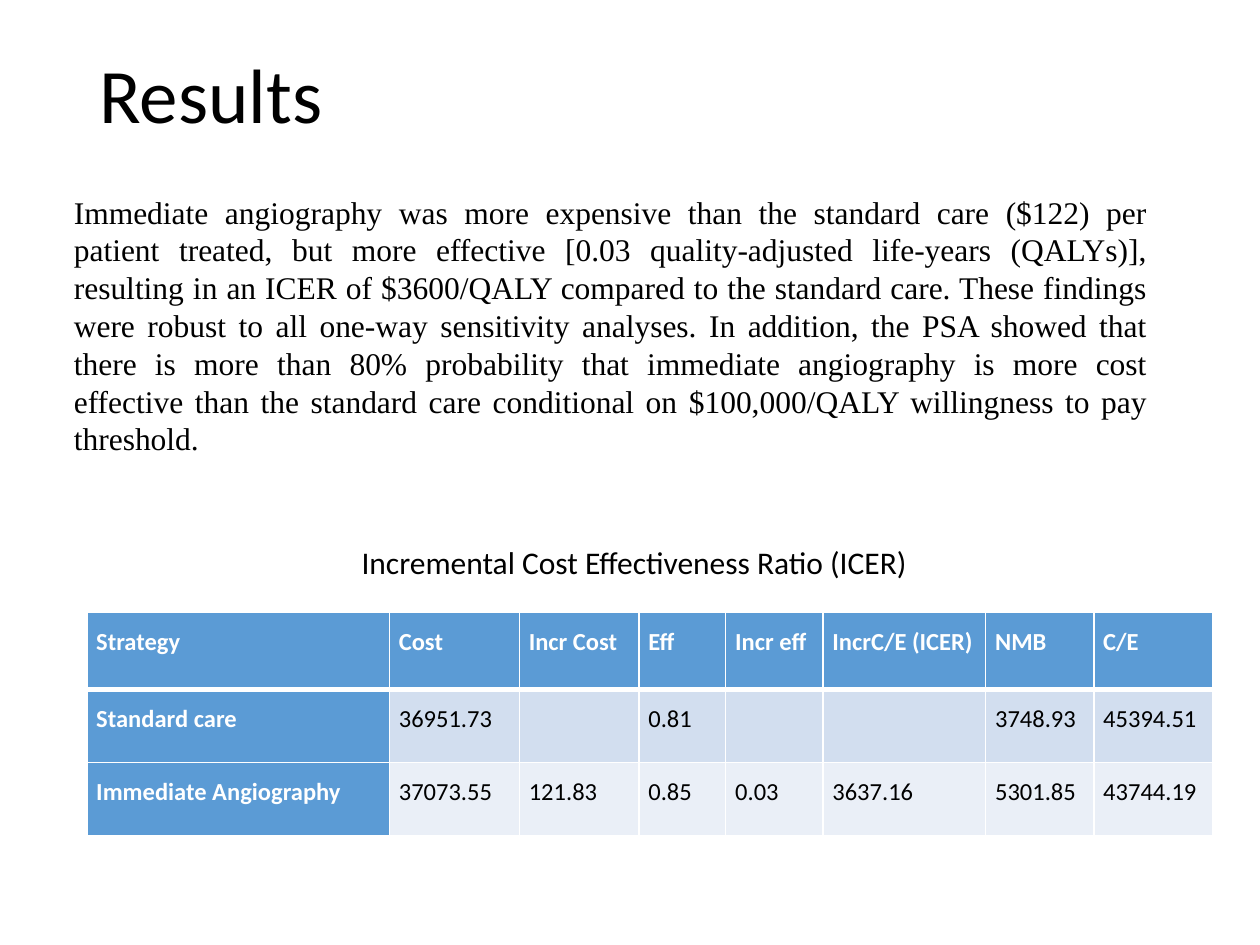
from lxml import etree
from pptx import Presentation, util as u
from pptx.dml.color import RGBColor
from pptx.enum import text
from pptx.oxml.ns import qn

BLACK = RGBColor(0x00, 0x00, 0x00)
WHITE = RGBColor(0xFF, 0xFF, 0xFF)
BLUE = RGBColor(0x5B, 0x9B, 0xD5)
BANDS = [RGBColor(0xD2, 0xDE, 0xEF), RGBColor(0xEA, 0xEF, 0xF7)]

FINDINGS = (
    "Immediate angiography was more expensive than the standard care ($122) per "
    "patient treated, but more effective [0.03 quality-adjusted life-years (QALYs)], "
    "resulting in an ICER of $3600/QALY compared to the standard care. These findings "
    "were robust to all one-way sensitivity analyses. In addition, the PSA showed that "
    "there is more than 80% probability that immediate angiography is more cost "
    "effective than the standard care conditional on $100,000/QALY willingness to pay "
    "threshold."
)
ICER_ROWS = [
    ["Strategy", "Cost", "Incr Cost", "Eff", "Incr eff", "IncrC/E (ICER)", "NMB", "C/E"],
    ["Standard care", "36951.73", "", "0.81", "", "", "3748.93", "45394.51"],
    ["Immediate Angiography", "37073.55", "121.83", "0.85", "0.03", "3637.16",
     "5301.85", "43744.19"],
]
COLUMN_WIDTHS = [6.1, 2.62, 2.41, 1.75, 1.96, 3.28, 2.18, 2.39]
ROW_HEIGHTS = [1.55, 1.47, 1.47]


def place(shape, left, top, width, height):
    """Position and size a shape in centimetres."""
    shape.left, shape.top = u.Cm(left), u.Cm(top)
    shape.width, shape.height = u.Cm(width), u.Cm(height)


def format_paragraph(paragraph, size, font="Calibri", color=BLACK, bold=False,
                     alignment=text.PP_ALIGN.LEFT, spacing=1.0):
    """Apply alignment, spacing and font to a paragraph and its runs."""
    paragraph.alignment = alignment
    paragraph.line_spacing = spacing
    for run in paragraph.runs:
        run.font.size = u.Pt(size)
        run.font.name = font
        run.font.bold = bold
        run.font.color.rgb = color


def add_title(slide, wording):
    """Fill and format the title placeholder."""
    title = slide.shapes.title
    place(title, 1.75, 1.02, 21.9, 3.68)
    title.text_frame.text = wording
    title.text_frame.vertical_anchor = text.MSO_ANCHOR.TOP
    format_paragraph(title.text_frame.paragraphs[0], 44, spacing=0.9)


def add_text(slide, wording, box, **style):
    """Add a wrapped 18-point text box."""
    shape = slide.shapes.add_textbox(*map(u.Cm, box))
    shape.text_frame.word_wrap = True
    shape.text_frame.text = wording
    format_paragraph(shape.text_frame.paragraphs[0], 18, **style)


def set_borders(cell, widths):
    """Draw white cell borders from a mapping of side to points."""
    properties = cell._tc.get_or_add_tcPr()
    for side, width in widths.items():
        line = etree.SubElement(properties, qn(f"a:ln{side}"), w=str(u.Pt(width)))
        fill = etree.SubElement(line, qn("a:solidFill"))
        etree.SubElement(fill, qn("a:srgbClr"), val=str(WHITE))


def format_cell(cell, wording, row, column):
    """Write one table cell with its header or band style."""
    is_header = row == 0 or column == 0
    set_borders(cell, {"L": 1, "R": 1, "T": 3 if row == 1 else 1,
                       "B": 3 if row == 0 else 1})
    cell.fill.solid()
    cell.fill.fore_color.rgb = BLUE if is_header else BANDS[row - 1]
    cell.margin_left = cell.margin_right = u.Cm(0.19)
    cell.margin_top = cell.margin_bottom = 0
    cell.text_frame.text = wording
    format_paragraph(cell.text_frame.paragraphs[0], 14,
                     color=WHITE if is_header else BLACK, bold=is_header,
                     alignment=text.PP_ALIGN.JUSTIFY, spacing=1.5)


def add_icer_table(slide):
    """Add the cost-effectiveness table."""
    frame = slide.shapes.add_table(
        len(ROW_HEIGHTS), len(COLUMN_WIDTHS), u.Cm(1.75), u.Cm(12.35),
        u.Cm(sum(COLUMN_WIDTHS)), u.Cm(sum(ROW_HEIGHTS)))
    table = frame.table
    for column, width in zip(table.columns, COLUMN_WIDTHS):
        column.width = u.Cm(width)
    for row, height in zip(table.rows, ROW_HEIGHTS):
        row.height = u.Cm(height)
    for row, values in enumerate(ICER_ROWS):
        for column, value in enumerate(values):
            format_cell(table.cell(row, column), value, row, column)


def main():
    """Build and save the results slide."""
    presentation = Presentation()
    presentation.slide_width, presentation.slide_height = u.Cm(25.4), u.Cm(19.05)
    slide = presentation.slides.add_slide(presentation.slide_layouts[5])
    add_title(slide, "Results")
    add_text(slide, FINDINGS, (1.24, 3.76, 22.15, 5.64), font="Times New Roman",
             alignment=text.PP_ALIGN.JUSTIFY)
    add_icer_table(slide)
    add_text(slide, "Incremental Cost Effectiveness Ratio (ICER)",
             (7.04, 10.82, 13.41, 1.02))
    presentation.save("out.pptx")


if __name__ == "__main__":
    main()
